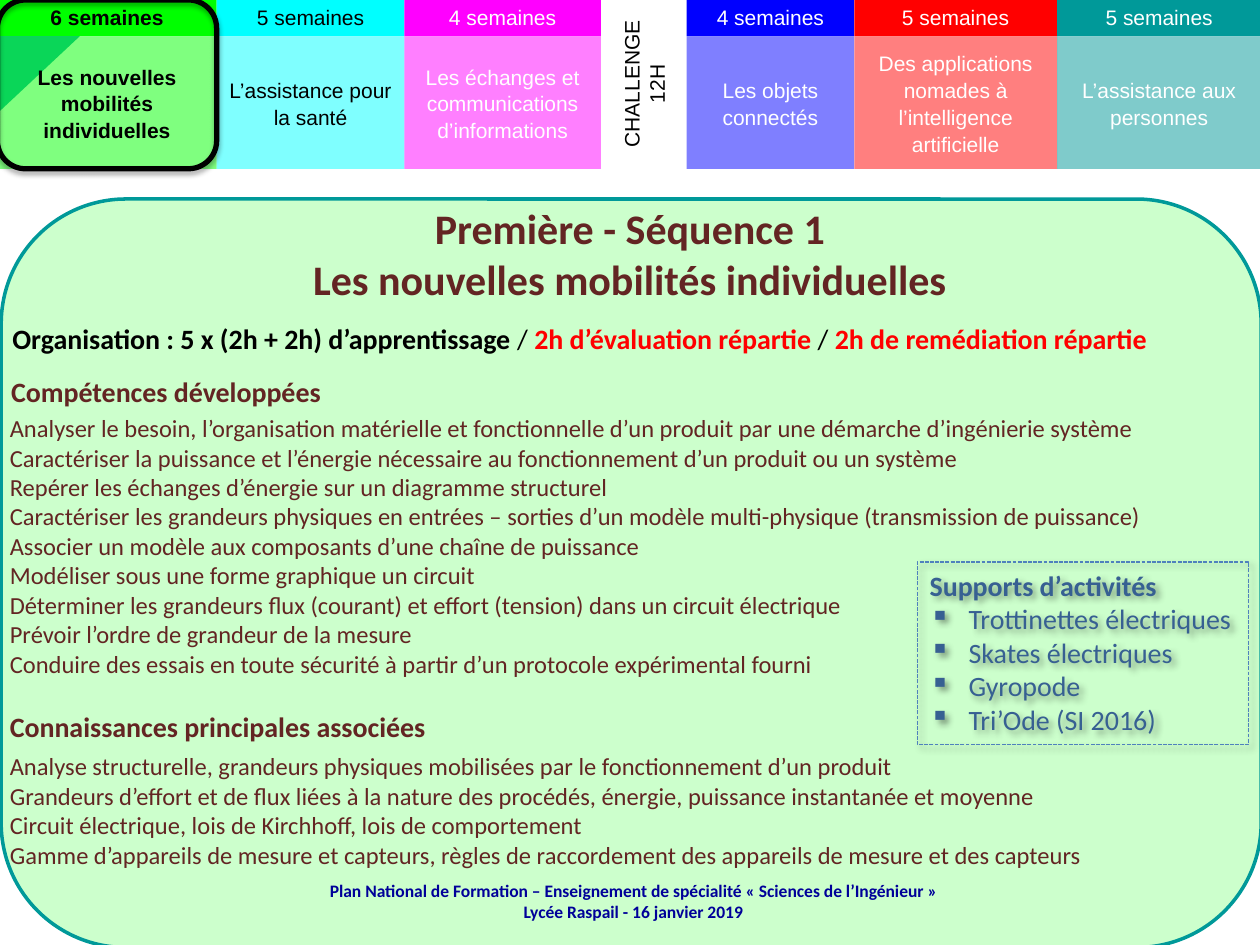
from dataclasses import dataclass
from typing import Optional

from lxml import etree
from pptx import Presentation
from pptx import util as u
from pptx.dml.color import RGBColor
from pptx.enum import dml, shapes, text
from pptx.oxml.ns import qn

COLORS = {
    "black": "000000", "white": "FFFFFF", "green": "00FF00", "cyan": "00FFFF",
    "magenta": "FF00FF", "blue": "0000FF", "red": "FF0000", "teal": "009999",
    "corner": "16AEB2", "navy": "000099", "brown": "632523",
    "steel": "376092", "border": "4F81BD",
}


@dataclass
class Sequence:
    weeks: str
    title: str
    width: float
    fill: str
    ink: str = "white"
    bold: bool = False


@dataclass
class Span:
    text: str
    color: str = "brown"
    bold: bool = False


@dataclass
class TextBlock:
    area: tuple
    size: float
    lines: list
    color: str = "brown"
    bold: bool = False
    align: text.PP_ALIGN = text.PP_ALIGN.LEFT
    anchor: text.MSO_ANCHOR = text.MSO_ANCHOR.TOP


CHALLENGE = Sequence("", "CHALLENGE 12H", 0.68, "white", "black")
SEQUENCES = [
    Sequence("6 semaines", "Les nouvelles mobilités individuelles", 1.74, "green", "black", True),
    Sequence("5 semaines", "L’assistance pour la santé", 1.49, "cyan", "black"),
    Sequence("4 semaines", "Les échanges et communications d’informations", 1.56, "magenta"),
    CHALLENGE,
    Sequence("4 semaines", "Les objets connectés", 1.33, "blue"),
    Sequence("5 semaines", "Des applications nomades à l’intelligence artificielle", 1.61, "red"),
    Sequence("5 semaines", "L’assistance aux personnes", 1.62, "teal"),
]
BAND_LEFT, BAND_TOP, HEADER_HEIGHT, BODY_HEIGHT = -0.02, -0.01, 0.3, 1.05

CENTER, MIDDLE = text.PP_ALIGN.CENTER, text.MSO_ANCHOR.MIDDLE
BLOCKS = [
    TextBlock((2.38, 6.95, 5.29, 0.4), 10, [
        "Plan National de Formation – Enseignement de spécialité « Sciences de l’Ingénieur »",
        "Lycée Raspail - 16 janvier 2019",
    ], "navy", True, CENTER, MIDDLE),
    TextBlock((0, 1.56, 10, 0.91), 24, [
        "Première - Séquence 1", "Les nouvelles mobilités individuelles",
    ], bold=True, align=CENTER),
    TextBlock((-0.01, 2.92, 10, 0.37), 16, ["Compétences développées"], bold=True),
    TextBlock((-0.02, 3.22, 10, 2.22), 14, [
        "Analyser le besoin, l’organisation matérielle et fonctionnelle d’un produit par une démarche d’ingénierie système",
        "Caractériser la puissance et l’énergie nécessaire au fonctionnement d’un produit ou un système",
        "Repérer les échanges d’énergie sur un diagramme structurel",
        "Caractériser les grandeurs physiques en entrées – sorties d’un modèle multi-physique (transmission de puissance)",
        "Associer un modèle aux composants d’une chaîne de puissance",
        "Modéliser sous une forme graphique un circuit",
        "Déterminer les grandeurs flux (courant) et effort (tension) dans un circuit électrique",
        "Prévoir l’ordre de grandeur de la mesure",
        "Conduire des essais en toute sécurité à partir d’un protocole expérimental fourni",
    ], anchor=MIDDLE),
    TextBlock((-0.02, 5.58, 10, 0.37), 16, ["Connaissances principales associées"], bold=True),
    TextBlock((-0.02, 5.91, 10, 1.04), 14, [
        "Analyse structurelle, grandeurs physiques mobilisées par le fonctionnement d’un produit",
        "Grandeurs d’effort et de flux liées à la nature des procédés, énergie, puissance instantanée et moyenne",
        "Circuit électrique, lois de Kirchhoff, lois de comportement",
        "Gamme d’appareils de mesure et capteurs, règles de raccordement des appareils de mesure et des capteurs",
    ], anchor=MIDDLE),
]
ORGANISATION = [
    Span("Organisation : 5 x (2h + 2h) d’apprentissage ", "black", True),
    Span("/ ", "black"),
    Span("2h d’évaluation répartie ", "red", True),
    Span("/ ", "black"),
    Span("2h de remédiation répartie", "red", True),
]
SUPPORTS = ["Trottinettes électriques", "Skates électriques", "Gyropode", "Tri’Ode (SI 2016)"]


def rgb(color: str) -> RGBColor:
    return RGBColor.from_string(COLORS[color])


def set_font(font, name: str, size: float, color: str, bold: bool) -> None:
    font.name, font.size, font.bold = name, u.Pt(size), bold
    font.color.rgb = rgb(color)


def add_figure(page, kind, area: tuple, fill: Optional[str] = None, opacity: int = 100,
               line: Optional[str] = None, weight: float = 0):
    shape = page.shapes.add_shape(kind, *map(u.Inches, area))
    if fill:
        shape.fill.solid()
        shape.fill.fore_color.rgb = rgb(fill)
        if opacity < 100:
            tint = shape.fill._xPr.find(qn("a:solidFill"))[0]
            etree.SubElement(tint, qn("a:alpha"), val=str(opacity * 1000))
    else:
        shape.fill.background()
    if line:
        shape.line.color.rgb = rgb(line)
        shape.line.width = u.Pt(weight)
    else:
        shape.line.fill.background()
    shape.shadow.inherit = False
    return shape


def cast_shadow(shape, opacity: int, blur: float, distance: float, angle: int) -> None:
    effects = shape._element.spPr.find(qn("a:effectLst"))
    shadow = etree.SubElement(effects, qn("a:outerShdw"), blurRad=str(u.Pt(blur)),
                              dist=str(u.Pt(distance)), dir=str(angle * 60000),
                              algn="tl", rotWithShape="0")
    tint = etree.SubElement(shadow, qn("a:srgbClr"), val=COLORS["black"])
    etree.SubElement(tint, qn("a:alpha"), val=str(opacity * 1000))


def add_cell(page, area: tuple, label: str, sequence: Sequence, opacity: int = 100,
             spacing: float = 1.0):
    cell = add_figure(page, shapes.MSO_SHAPE.RECTANGLE, area, sequence.fill, opacity)
    frame = cell.text_frame
    frame.text, frame.word_wrap, frame.vertical_anchor = label, True, MIDDLE
    para = frame.paragraphs[0]
    para.alignment, para.line_spacing = CENTER, spacing
    set_font(para.runs[0].font, "Arial", 12, sequence.ink, sequence.bold)
    return cell


def add_timeline(page) -> None:
    left = BAND_LEFT
    for sequence in SEQUENCES:
        if sequence is CHALLENGE:
            area = (left, BAND_TOP, sequence.width, HEADER_HEIGHT + BODY_HEIGHT)
            cell = add_cell(page, area, sequence.title, sequence, 50)
            cell.text_frame._txBody.bodyPr.set("vert", "vert270")
        else:
            body = (left, BAND_TOP + HEADER_HEIGHT, sequence.width, BODY_HEIGHT)
            add_cell(page, body, sequence.title, sequence, 50, 1.07)
            header = (left, BAND_TOP, sequence.width, HEADER_HEIGHT)
            add_cell(page, header, sequence.weeks, sequence)
        left += sequence.width
    current = add_figure(page, shapes.MSO_SHAPE.ROUNDED_RECTANGLE,
                         (BAND_LEFT, 0, SEQUENCES[0].width, 1.34), line="black", weight=3)
    cast_shadow(current, 35, 3.1, 1.8, 90)


def add_block(page, block: TextBlock) -> None:
    box = page.shapes.add_textbox(*map(u.Inches, block.area))
    frame = box.text_frame
    frame.text = "\n".join(block.lines)
    frame.word_wrap, frame.vertical_anchor = True, block.anchor
    for para in frame.paragraphs:
        para.alignment = block.align
        set_font(para.runs[0].font, "Calibri", block.size, block.color, block.bold)


def add_organisation(page) -> None:
    frame = page.shapes.add_textbox(*map(u.Inches, (0, 2.5, 10, 0.37))).text_frame
    frame.word_wrap, frame.vertical_anchor = True, MIDDLE
    for span in ORGANISATION:
        run = frame.paragraphs[0].add_run()
        run.text = span.text
        set_font(run.font, "Calibri", 16, span.color, span.bold)


def add_supports(page) -> None:
    box = add_figure(page, shapes.MSO_SHAPE.RECTANGLE, (7.28, 4.46, 2.63, 1.45),
                     line="border", weight=0.75)
    box.line.dash_style = dml.MSO_LINE.SQUARE_DOT
    cast_shadow(box, 40, 4, 3, 45)
    frame = box.text_frame
    frame.text = "\n".join(["Supports d’activités", *SUPPORTS])
    frame.word_wrap, frame.vertical_anchor = True, text.MSO_ANCHOR.TOP
    for index, para in enumerate(frame.paragraphs):
        para.alignment = text.PP_ALIGN.LEFT
        if index:
            props = para._p.get_or_add_pPr()
            indent = u.Inches(0.31)
            props.set("marL", str(indent))
            props.set("indent", str(-indent))
            etree.SubElement(props, qn("a:buChar"), char="▪")
        set_font(para.runs[0].font, "Calibri", 16, "steel", index == 0)


def main() -> None:
    deck = Presentation()
    deck.slide_width, deck.slide_height = u.Inches(10), u.Inches(7.5)
    page = deck.slides.add_slide(deck.slide_layouts[6])
    corner = add_figure(page, shapes.MSO_SHAPE.ISOSCELES_TRIANGLE, (0, 0, 0.94, 0.88), "corner")
    corner.adjustments[0] = 1
    corner.rotation = 180
    add_figure(page, shapes.MSO_SHAPE.ROUNDED_RECTANGLE, (0.01, 1.58, 10, 5.94),
               "green", 20, "teal", 2)
    for block in BLOCKS:
        add_block(page, block)
    add_organisation(page)
    add_timeline(page)
    add_supports(page)
    deck.save("out.pptx")


if __name__ == "__main__":
    main()
